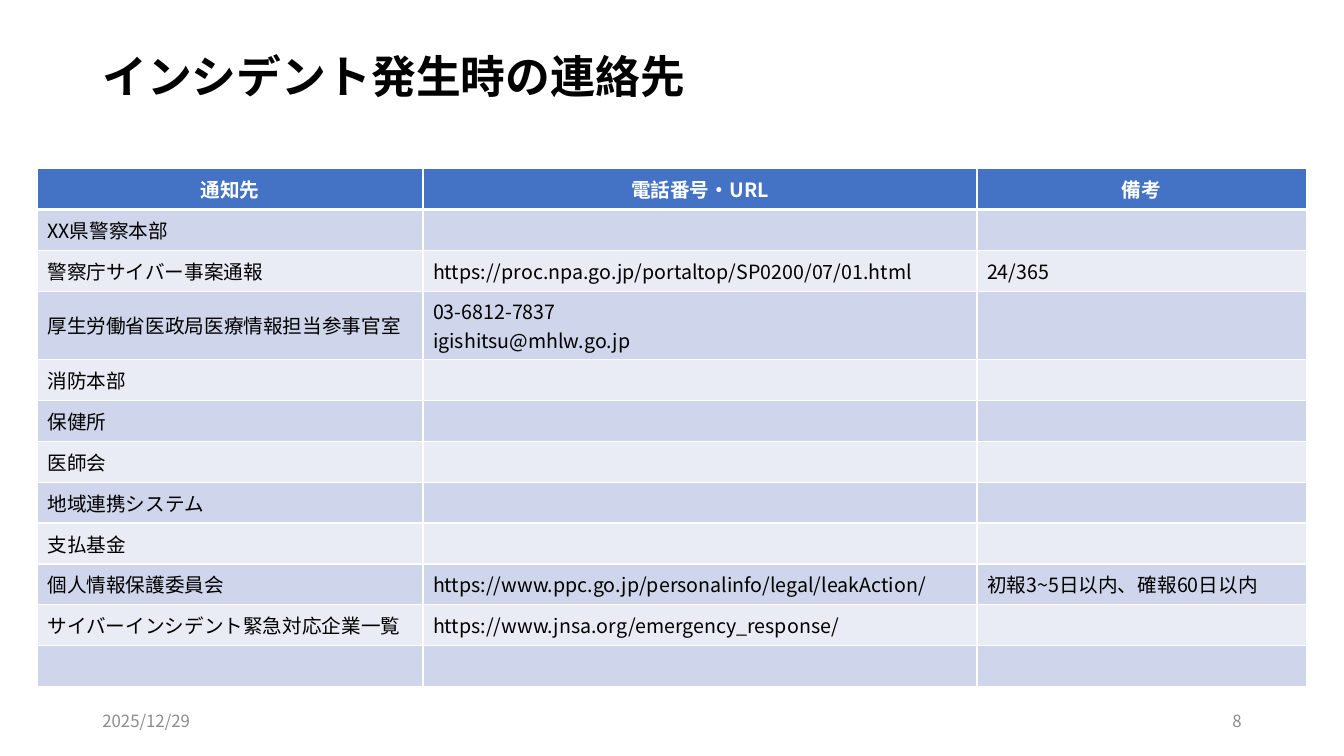
from lxml.etree import SubElement
from pptx import Presentation
from pptx.dml.color import RGBColor
from pptx.enum.text import MSO_ANCHOR as Anchor, PP_ALIGN as Align
from pptx.oxml.ns import qn
from pptx.util import Cm, Pt

FONT = "Noto Sans CJK JP"
BLACK = RGBColor(0x00, 0x00, 0x00)
WHITE = RGBColor(0xFF, 0xFF, 0xFF)
GRAY = RGBColor(0x8C, 0x8C, 0x8C)
HEADER_BLUE = RGBColor(0x44, 0x72, 0xC4)
BANDS = (RGBColor(0xE9, 0xEB, 0xF5), RGBColor(0xCF, 0xD5, 0xEA))

COLUMN_WIDTHS = (9.72, 13.96, 8.3)
ROW_HEIGHT = 1.03
EXTRA_LINE_HEIGHT = 0.69
CONTACTS = [
    ("通知先", "電話番号・URL", "備考"),
    ("XX県警察本部", "", ""),
    ("警察庁サイバー事案通報", "https://proc.npa.go.jp/portaltop/SP0200/07/01.html", "24/365"),
    ("厚生労働省医政局医療情報担当参事官室", "03-6812-7837\nigishitsu@mhlw.go.jp", ""),
    ("消防本部", "", ""),
    ("保健所", "", ""),
    ("医師会", "", ""),
    ("地域連携システム", "", ""),
    ("支払基金", "", ""),
    ("個人情報保護委員会", "https://www.ppc.go.jp/personalinfo/legal/leakAction/", "初報3~5日以内、確報60日以内"),
    ("サイバーインシデント緊急対応企業一覧", "https://www.jnsa.org/emergency_response/", ""),
    ("", "", ""),
]


def height_of_row(texts):
    """Return the height in cm that fits the cell with the most lines."""
    return ROW_HEIGHT + EXTRA_LINE_HEIGHT * max(text.count("\n") for text in texts)


class SlideBuilder:
    def __init__(self, slide):
        self.slide = slide

    def format_text(self, text_frame, size, color, bold=False, align=Align.LEFT):
        for paragraph in text_frame.paragraphs:
            paragraph.alignment = align
            for run in paragraph.runs:
                run.font.name = FONT
                run.font.size = Pt(size)
                run.font.bold = bold
                run.font.color.rgb = color
                SubElement(run.font._element, qn("a:ea"), typeface=FONT)
            if not paragraph.runs:
                # An empty cell takes its line height from the end mark.
                SubElement(paragraph._p, qn("a:endParaRPr"), sz=str(size * 100))

    def text(self, text, left, top, width, height, size, color, **style):
        box = self.slide.shapes.add_textbox(Cm(left), Cm(top), Cm(width), Cm(height))
        text_frame = box.text_frame
        text_frame.word_wrap = True
        text_frame.vertical_anchor = Anchor.MIDDLE
        text_frame.text = text
        self.format_text(text_frame, size, color, **style)
        return text_frame

    def borders(self, cell, bottom_width):
        properties = cell._tc.get_or_add_tcPr()
        for side, width in (("L", 1), ("R", 1), ("T", 1), ("B", bottom_width)):
            line = SubElement(properties, qn(f"a:ln{side}"), w=str(Pt(width)))
            fill = SubElement(line, qn("a:solidFill"))
            SubElement(fill, qn("a:srgbClr"), val=str(WHITE))

    def table(self, rows, left, top, widths):
        """Add a table with a blue header row and banded body rows."""
        heights = [height_of_row(texts) for texts in rows]
        frame = self.slide.shapes.add_table(
            len(rows), len(widths), Cm(left), Cm(top), Cm(sum(widths)), Cm(sum(heights)))
        table = frame.table
        table.horz_banding = False
        for column, width in zip(table.columns, widths):
            column.width = Cm(width)
        for row_index, texts in enumerate(rows):
            is_header = row_index == 0
            table.rows[row_index].height = Cm(heights[row_index])
            for column_index, text in enumerate(texts):
                cell = table.cell(row_index, column_index)
                cell.text_frame.text = text
                cell.vertical_anchor = Anchor.MIDDLE
                self.borders(cell, 3 if is_header else 1)
                cell.fill.solid()
                cell.fill.fore_color.rgb = HEADER_BLUE if is_header else BANDS[row_index % 2]
                self.format_text(
                    cell.text_frame, 14, WHITE if is_header else BLACK, bold=is_header,
                    align=Align.CENTER if is_header else Align.LEFT)


def main():
    presentation = Presentation()
    presentation.slide_width = Cm(33.87)
    presentation.slide_height = Cm(19.05)
    builder = SlideBuilder(presentation.slides.add_slide(presentation.slide_layouts[6]))

    title = builder.text("インシデント発生時の連絡先", 2.33, 1.01, 29.21, 1.94, 32, BLACK, bold=True)
    title.paragraphs[0].line_spacing = 0.9
    builder.table(CONTACTS, 0.94, 4.25, COLUMN_WIDTHS)
    builder.text("2025/12/29", 2.33, 17.66, 7.62, 1.01, 12, GRAY)
    builder.text("8", 23.92, 17.66, 7.62, 1.01, 12, GRAY, align=Align.RIGHT)

    presentation.save("out.pptx")


if __name__ == "__main__":
    main()
